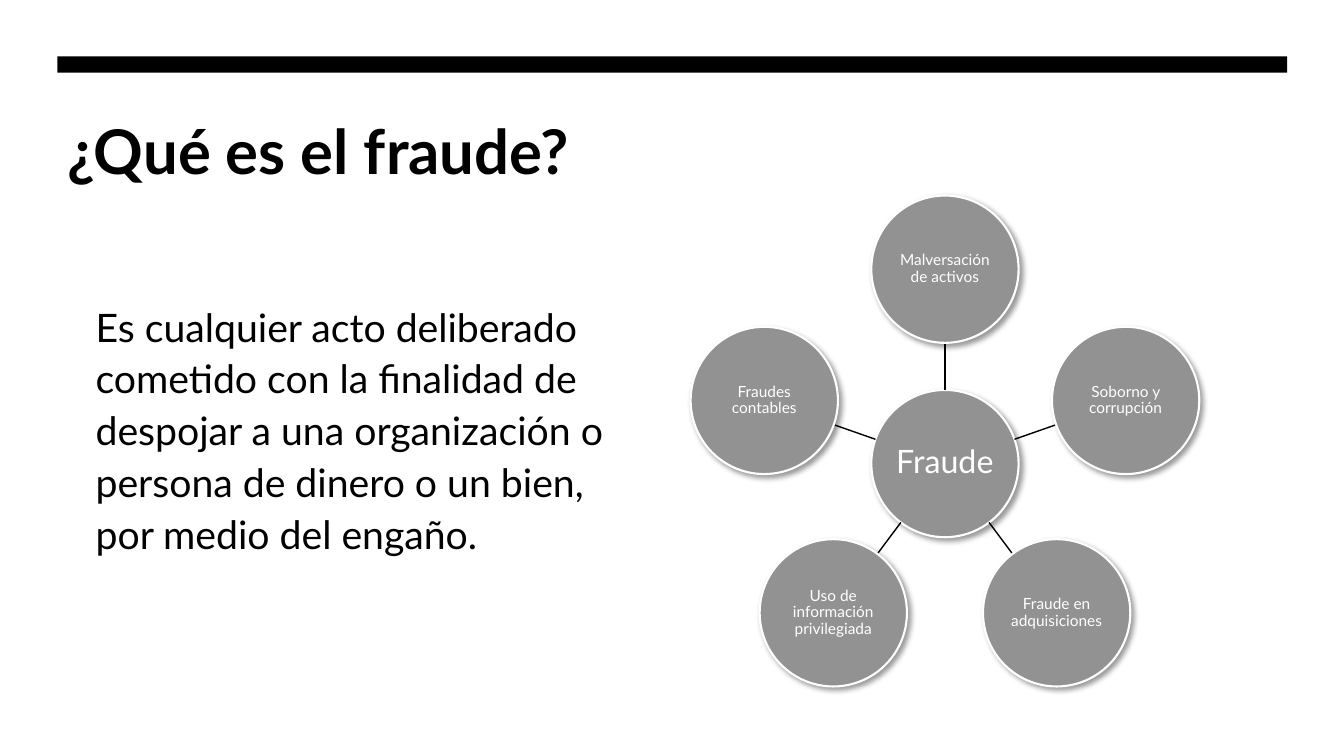
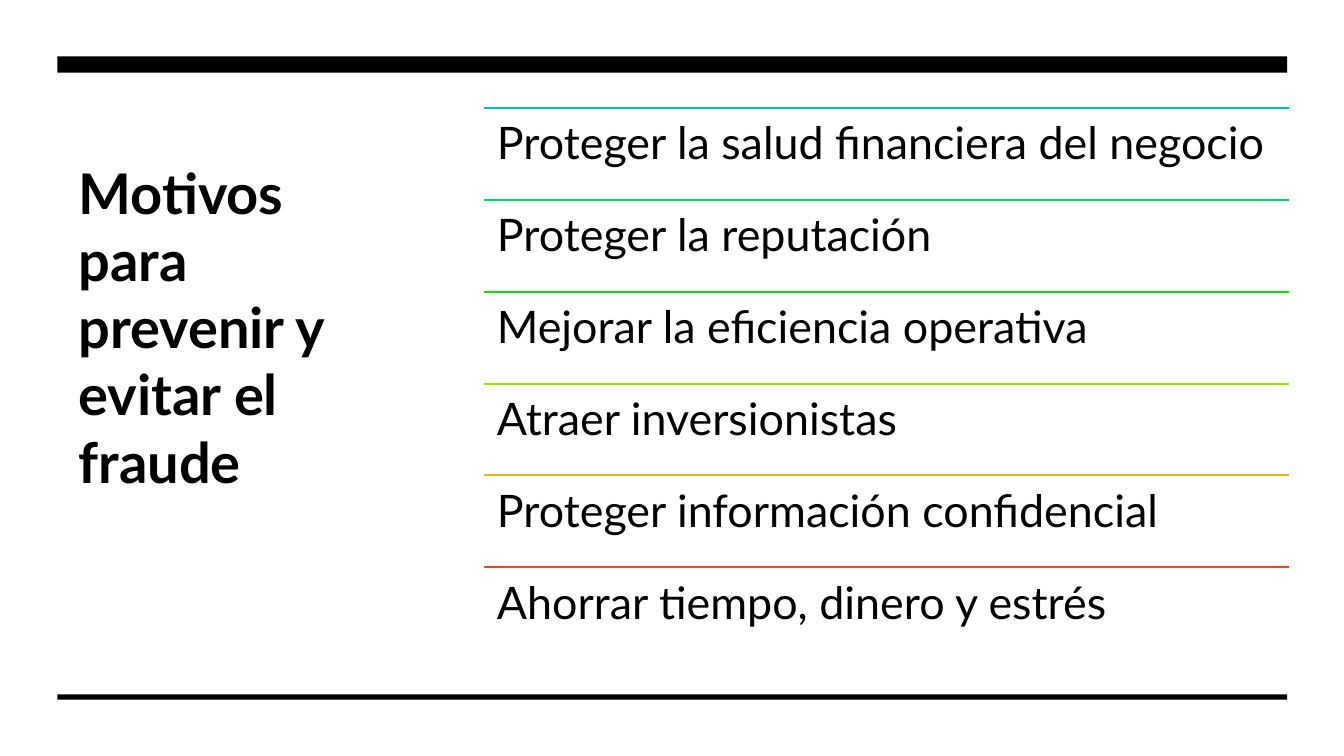
import math

from lxml import etree
from pptx import Presentation
from pptx import util as u
from pptx.dml.color import RGBColor
from pptx.enum import shapes, text
from pptx.oxml.ns import qn

W, H = 13.33, 7.5
FONT = "Lato"
BLACK, WHITE, GREY = "000000", "FFFFFF", "929292"
LEFT, CENTER = text.PP_ALIGN.LEFT, text.PP_ALIGN.CENTER
TOP, MIDDLE = text.MSO_ANCHOR.TOP, text.MSO_ANCHOR.MIDDLE
TOP_BAND = (4.27, 7.47, 91.5, 2.13)
BOTTOM_BAND = (4.27, 91.87, 91.5, 0.67)

FRAUD_TYPES = ["Malversación de activos", "Soborno y corrupción", "Fraude en adquisiciones",
               "Uso de información privilegiada", "Fraudes contables"]
REASONS = [("Proteger la salud financiera del negocio", "00BAC8"),
           ("Proteger la reputación", "04D169"),
           ("Mejorar la eficiencia operativa", "1AD909"),
           ("Atraer inversionistas", "99E00F"),
           ("Proteger información confidencial", "E7B615"),
           ("Ahorrar tiempo, dinero y estrés", "E64823")]


def rgb(color):
    """Turn a hex string into a colour."""
    return RGBColor.from_string(color)


def area(left, top, width, height):
    """Turn percentages of the slide into inches."""
    return left * W / 100, top * H / 100, width * W / 100, height * H / 100


def inches(*values):
    """Turn inches into slide units."""
    return [u.Inches(v) for v in values]


def write(sp, words, size, color=BLACK, bold=False, align=LEFT, anchor=TOP,
          spacing=1.0, inset=(0.1, 0.05, 0.1, 0.05)):
    """Put one formatted paragraph in a shape."""
    tf = sp.text_frame
    left, top, right, bottom = inches(*inset)
    frame = {"word_wrap": True, "auto_size": text.MSO_AUTO_SIZE.NONE, "vertical_anchor": anchor,
             "margin_left": left, "margin_top": top, "margin_right": right, "margin_bottom": bottom}
    for name, value in frame.items():
        setattr(tf, name, value)
    p = tf.paragraphs[0]
    p.alignment, p.line_spacing = align, spacing
    r = p.add_run()
    r.text = words
    for name, value in {"name": FONT, "size": u.Pt(size), "bold": bold}.items():
        setattr(r.font, name, value)
    r.font.color.rgb = rgb(color)


def add_text(s, box, words, size, **fmt):
    """Add a text box."""
    write(s.shapes.add_textbox(*inches(*box)), words, size, **fmt)


def add_line(s, start, end, color, width):
    """Add a straight line without shadow."""
    line = s.shapes.add_connector(shapes.MSO_CONNECTOR.STRAIGHT, *inches(*start, *end))
    line.line.color.rgb = rgb(color)
    line.line.width = u.Pt(width)
    etree.SubElement(line._element.spPr, qn("a:effectLst"))


def add_band(s, box):
    """Add a black horizontal band."""
    sp = s.shapes.add_shape(shapes.MSO_SHAPE.RECTANGLE, *inches(*box))
    sp.shadow.inherit = False
    sp.fill.solid()
    sp.fill.fore_color.rgb = rgb(BLACK)
    sp.line.fill.background()


def add_slide(prs, words, box, size, **fmt):
    """Add a slide with its top band and title."""
    s = prs.slides.add_slide(prs.slide_layouts[5])
    add_band(s, area(*TOP_BAND))
    title = s.shapes.title
    title.left, title.top, title.width, title.height = inches(*box)
    write(title, words, size, bold=True, **fmt)
    return s


def add_shadow(sp):
    """Give a shape a soft shadow at lower right."""
    sp.shadow.inherit = False
    effects = sp._element.spPr.find(qn("a:effectLst"))
    shadow = etree.SubElement(effects, qn("a:outerShdw"), blurRad=str(u.Pt(4)),
                              dist=str(u.Pt(3)), dir="2700000", algn="tl", rotWithShape="0")
    color = etree.SubElement(shadow, qn("a:srgbClr"), val=BLACK)
    etree.SubElement(color, qn("a:alpha"), val="40000")


def add_disc(s, center, diameter, words, size):
    """Add a labelled grey disc around a centre."""
    x, y = (c - diameter / 2 for c in center)
    sp = s.shapes.add_shape(shapes.MSO_SHAPE.OVAL, *inches(x, y, diameter, diameter))
    sp.fill.solid()
    sp.fill.fore_color.rgb = rgb(GREY)
    sp.line.color.rgb = rgb(WHITE)
    sp.line.width = u.Pt(1.5)
    add_shadow(sp)
    write(sp, words, size, color=WHITE, align=CENTER, anchor=MIDDLE, spacing=0.9,
          inset=(0.01,) * 4)


def add_wheel(s, box, hub_label, labels):
    """Place a hub and a ring of discs joined by spokes."""
    x, y, w, h = box
    step = 2 * math.pi / len(labels)
    diameter = 0.3 * h
    radius = (h - diameter) / (1 + math.cos(step / 2))
    cx, cy = x + w / 2, y + diameter / 2 + radius
    hub = cx, cy + 0.03 * diameter
    add_disc(s, hub, diameter, hub_label, 23)
    for i, label in enumerate(labels):
        node = cx + radius * math.sin(i * step), cy - radius * math.cos(i * step)
        share = diameter / 2 / math.dist(hub, node)
        start, end = ([a + (b - a) * t for a, b in zip(hub, node)] for t in (share, 1 - share))
        add_line(s, start, end, BLACK, 1)
        add_disc(s, node, diameter, label, 11)


def add_ruled_list(s, box, rows):
    """Place equal rows, each under a coloured line."""
    x, y, w, h = box
    row_h = h / len(rows)
    for i, (words, color) in enumerate(rows):
        top = y + i * row_h
        add_line(s, (x, top), (x + w, top), color, 1.5)
        add_text(s, (x, top, w, row_h), words, 32, spacing=0.9, inset=(0.13,) * 4)


def definition_slide(prs):
    """Build the slide that defines fraud."""
    s = add_slide(prs, "¿Qué es el fraude?", area(4.27, 14.27, 91.5, 21.33), 44)
    add_text(s, area(6.38, 38.8, 40.58, 39.07),
             "Es cualquier acto deliberado cometido con la finalidad de despojar a una "
             "organización o persona de dinero o un bien, por medio del engaño.", 28, spacing=1.1)
    add_wheel(s, area(51.37, 25.87, 37.88, 64.93), "Fraude", FRAUD_TYPES)


def reasons_slide(prs):
    """Build the slide that lists the reasons."""
    s = add_slide(prs, "Motivos para prevenir y evitar el fraude",
                  area(5.1, 20.27, 25.88, 59.33), 40, inset=(0.1, 0.05, 0.4, 0.05))
    add_band(s, area(*BOTTOM_BAND))
    add_ruled_list(s, area(36, 14.27, 59.92, 72.93), REASONS)


def main():
    """Build and save the presentation."""
    prs = Presentation()
    prs.slide_width, prs.slide_height = inches(W, H)
    definition_slide(prs)
    reasons_slide(prs)
    prs.save("out.pptx")


if __name__ == "__main__":
    main()
